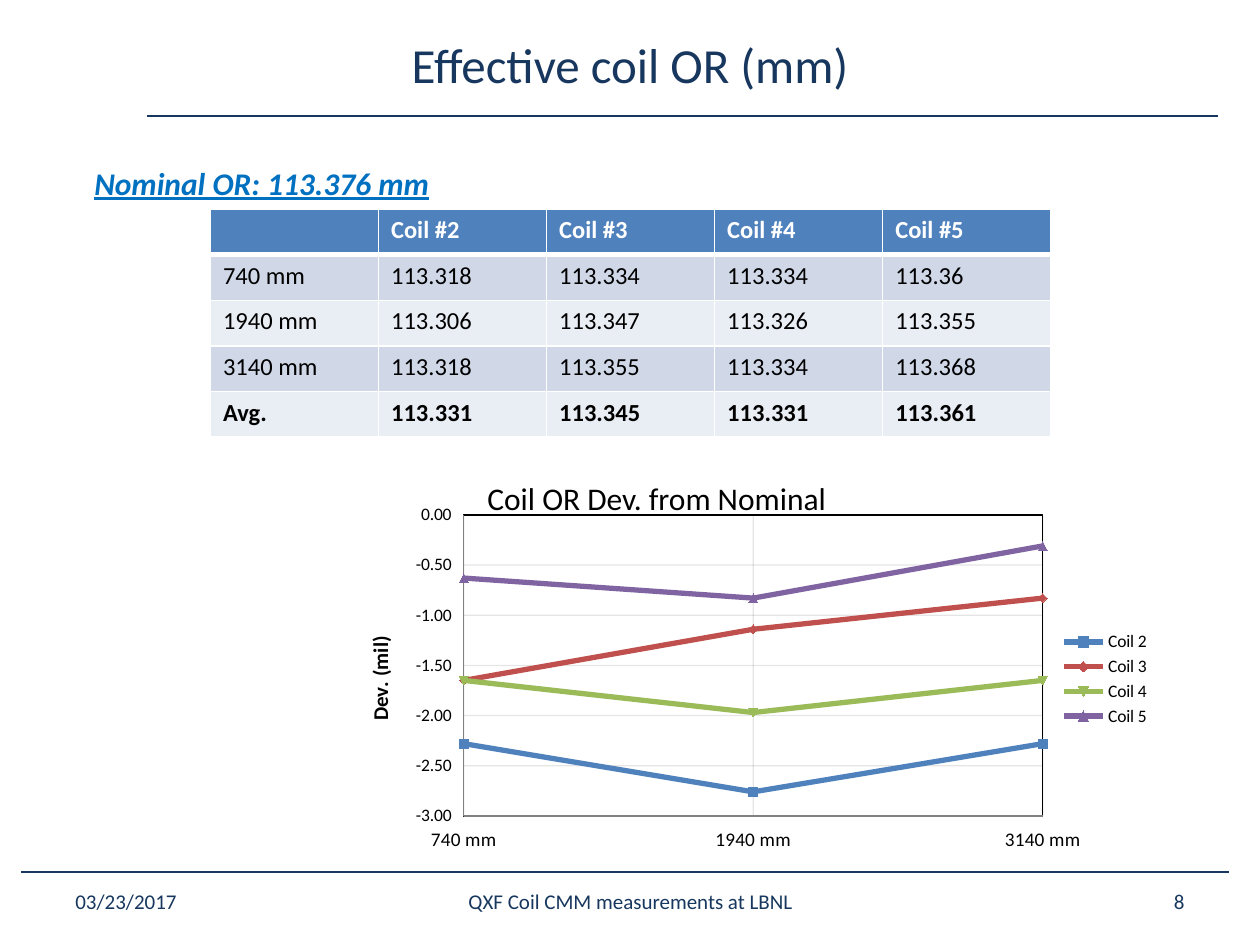
from dataclasses import dataclass

from lxml.etree import SubElement
from pptx import Presentation
from pptx.chart.data import CategoryChartData
from pptx.dml.color import RGBColor
from pptx.enum.chart import (XL_AXIS_CROSSES, XL_CHART_TYPE, XL_LEGEND_POSITION,
                             XL_TICK_LABEL_POSITION, XL_TICK_MARK)
from pptx.enum.shapes import MSO_CONNECTOR
from pptx.enum.text import MSO_ANCHOR, PP_ALIGN
from pptx.oxml import parse_xml
from pptx.oxml.ns import nsdecls, qn
from pptx.util import Inches, Pt


@dataclass(frozen=True)
class Theme:
    font: str = "Calibri"
    navy: str = "17375E"
    blue: str = "0070C0"
    black: str = "000000"
    white: str = "FFFFFF"
    axis: str = "808080"
    header: str = "4F81BD"
    bands: tuple = ("D0D8E8", "E9EDF4")
    title: float = 28
    heading: float = 18
    table: float = 14
    footer: float = 12
    axis_title: float = 12
    category: float = 11
    chart: float = 10


@dataclass(frozen=True)
class Label:
    text: str
    left: float
    top: float
    width: float
    height: float
    size: float
    color: str
    align: PP_ALIGN = PP_ALIGN.LEFT
    anchor: MSO_ANCHOR = MSO_ANCHOR.MIDDLE
    wrap: bool = True
    emphasis: bool = False


@dataclass(frozen=True)
class Rule:
    left: float
    right: float
    top: float


@dataclass(frozen=True)
class Coil:
    name: str
    deviations: tuple
    color: str


THEME = Theme()
RULES = (Rule(0.17, 9.75, 6.92), Rule(1.17, 9.67, 0.92))
LABELS = (
    Label("Effective coil OR (mm)", 0.5, 0.17, 9, 0.67, THEME.title, THEME.navy, PP_ALIGN.CENTER),
    Label("03/23/2017", 0.5, 6.95, 2.33, 0.4, THEME.footer, THEME.navy),
    Label("QXF Coil CMM measurements at LBNL", 3.42, 6.95, 3.17, 0.4, THEME.footer, THEME.navy,
          PP_ALIGN.CENTER),
    Label("8", 7.17, 6.95, 2.33, 0.4, THEME.footer, THEME.navy, PP_ALIGN.RIGHT),
    Label("Nominal OR: 113.376 mm", 0.65, 1.25, 3.27, 0.4, THEME.heading, THEME.blue,
          anchor=MSO_ANCHOR.TOP, wrap=False, emphasis=True),
)
CHART_TITLE = Label("Coil OR Dev. from Nominal", 3.77, 3.75, 3.23, 0.4, THEME.heading,
                    THEME.black, anchor=MSO_ANCHOR.TOP, wrap=False)
POSITIONS = ("740 mm", "1940 mm", "3140 mm")
TABLE_ROWS = (
    ("", "Coil #2", "Coil #3", "Coil #4", "Coil #5"),
    (POSITIONS[0], "113.318", "113.334", "113.334", "113.36"),
    (POSITIONS[1], "113.306", "113.347", "113.326", "113.355"),
    (POSITIONS[2], "113.318", "113.355", "113.334", "113.368"),
    ("Avg.", "113.331", "113.345", "113.331", "113.361"),
)
COILS = (
    Coil("Coil 2", (-2.28, -2.76, -2.28), "4F81BD"),
    Coil("Coil 3", (-1.65, -1.14, -0.83), "C0504D"),
    Coil("Coil 4", (-1.65, -1.97, -1.65), "9BBB59"),
    Coil("Coil 5", (-0.63, -0.83, -0.31), "8064A2"),
)


def set_font(font, size: float, color: str, **extra) -> None:
    values = {"name": THEME.font, "size": Pt(size), **extra}
    for name, value in values.items():
        setattr(font, name, value)
    font.color.rgb = RGBColor.from_string(color)


def set_line(line, color: str, width: float) -> None:
    line.color.rgb = RGBColor.from_string(color)
    line.width = Pt(width)


def add_label(slide, label: Label) -> None:
    shape = slide.shapes.add_textbox(*map(Inches, (label.left, label.top, label.width, label.height)))
    frame = shape.text_frame
    frame.word_wrap = label.wrap
    frame.vertical_anchor = label.anchor
    paragraph = frame.paragraphs[0]
    paragraph.alignment = label.align
    run = paragraph.add_run()
    run.text = label.text
    styles = dict.fromkeys(("bold", "italic", "underline"), label.emphasis)
    set_font(run.font, label.size, label.color, **styles)


def add_rule(slide, rule: Rule) -> None:
    connector = slide.shapes.add_connector(
        MSO_CONNECTOR.STRAIGHT, *map(Inches, (rule.left, rule.top, rule.right, rule.top)))
    set_line(connector.line, THEME.navy, 1.5)
    SubElement(connector._element.spPr, qn("a:effectLst"))


def set_borders(cell, **widths: float) -> None:
    """Draw white borders; widths in points are keyed by side: L, R, T, B."""
    properties = cell._tc.get_or_add_tcPr()
    for index, (side, width) in enumerate(widths.items()):
        properties.insert(index, parse_xml(
            f'<a:ln{side} {nsdecls("a")} w="{Pt(width)}"><a:solidFill>'
            f'<a:srgbClr val="{THEME.white}"/></a:solidFill></a:ln{side}>'))


def add_measurements(slide) -> None:
    count = len(TABLE_ROWS)
    table = slide.shapes.add_table(
        count, len(TABLE_ROWS[0]), *map(Inches, (1.67, 1.66, 6.67, 1.81))).table
    for row, texts in enumerate(TABLE_ROWS):
        is_header = row == 0
        fill = THEME.header if is_header else THEME.bands[(row - 1) % 2]
        for column, text in enumerate(texts):
            cell = table.cell(row, column)
            cell.fill.solid()
            cell.fill.fore_color.rgb = RGBColor.from_string(fill)
            set_borders(cell, L=1, R=1, T=3 if row == 1 else 1, B=3 if is_header else 1)
            cell.text = text
            set_font(cell.text_frame.paragraphs[0].font, THEME.table,
                     THEME.white if is_header else THEME.black,
                     bold=row in (0, count - 1))


def style_axis(axis, size: float) -> None:
    values = {"major_tick_mark": XL_TICK_MARK.NONE, "minor_tick_mark": XL_TICK_MARK.NONE,
              "tick_label_position": XL_TICK_LABEL_POSITION.LOW, "has_major_gridlines": True}
    for name, value in values.items():
        setattr(axis, name, value)
    set_font(axis.tick_labels.font, size, THEME.black)
    set_line(axis.format.line, THEME.axis, 0.75)
    grid = axis.major_gridlines
    set_line(grid.format.line, THEME.black, 0.75)
    color = next(grid._xAx.find(qn("c:majorGridlines")).iter(qn("a:srgbClr")))
    SubElement(color, qn("a:alpha")).set("val", "10000")


def frame_plot(chart) -> None:
    """Place the inner plot area and give it a thin black border."""
    area = chart._chartSpace.chart.plotArea
    for layout in area.findall(qn("c:layout")):
        area.remove(layout)
    sizes = {"x": 0.133, "y": 0.031, "w": 0.718, "h": 0.86}
    modes = '<c:xMode val="edge"/><c:yMode val="edge"/>'
    places = "".join(f'<c:{name} val="{value}"/>' for name, value in sizes.items())
    area.insert(0, parse_xml(
        f'<c:layout {nsdecls("c")}><c:manualLayout><c:layoutTarget val="inner"/>'
        f'{modes}{places}</c:manualLayout></c:layout>'))
    area.append(parse_xml(
        f'<c:spPr {nsdecls("c", "a")}><a:noFill/><a:ln w="{Pt(0.75)}"><a:solidFill>'
        f'<a:srgbClr val="{THEME.black}"/></a:solidFill></a:ln></c:spPr>'))


def add_deviation_chart(slide) -> None:
    data = CategoryChartData(number_format="0.00")
    data.categories = POSITIONS
    for coil in COILS:
        data.add_series(coil.name, coil.deviations)
    chart = slide.shapes.add_chart(
        XL_CHART_TYPE.LINE_MARKERS, *map(Inches, (2.83, 4, 6.4, 2.78)), data).chart
    set_font(chart.font, THEME.chart, THEME.black)
    chart.has_title = False
    chart.has_legend = True
    chart.legend.position = XL_LEGEND_POSITION.RIGHT
    chart.legend.include_in_layout = False
    chart.plots[0].vary_by_categories = False
    for coil, series in zip(COILS, chart.plots[0].series):
        series.smooth = False
        set_line(series.format.line, coil.color, 3)
        series.marker.format.fill.solid()
        series.marker.format.fill.fore_color.rgb = RGBColor.from_string(coil.color)
    style_axis(chart.category_axis, THEME.category)
    axis = chart.value_axis
    style_axis(axis, THEME.chart)
    scale = {"minimum_scale": -3, "maximum_scale": 0, "major_unit": 0.5,
             "crosses": XL_AXIS_CROSSES.MINIMUM}
    for name, value in scale.items():
        setattr(axis, name, value)
    axis.tick_labels.number_format = "0.00"
    axis.tick_labels.number_format_is_linked = False
    run = axis.axis_title.text_frame.paragraphs[0].add_run()
    run.text = "Dev. (mil)"
    set_font(run.font, THEME.axis_title, THEME.black, bold=True)
    crossing = axis._element.find(qn("c:crossBetween"))
    if crossing is None:
        crossing = parse_xml(f'<c:crossBetween {nsdecls("c")}/>')
        axis._element.find(qn("c:crosses")).addnext(crossing)
    crossing.set("val", "midCat")
    frame_plot(chart)


def main() -> None:
    presentation = Presentation()
    presentation.slide_width, presentation.slide_height = Inches(10), Inches(7.5)
    slide = presentation.slides.add_slide(presentation.slide_layouts[6])
    for rule in RULES:
        add_rule(slide, rule)
    for label in LABELS:
        add_label(slide, label)
    add_measurements(slide)
    add_deviation_chart(slide)
    add_label(slide, CHART_TITLE)
    presentation.save("out.pptx")


if __name__ == "__main__":
    main()
